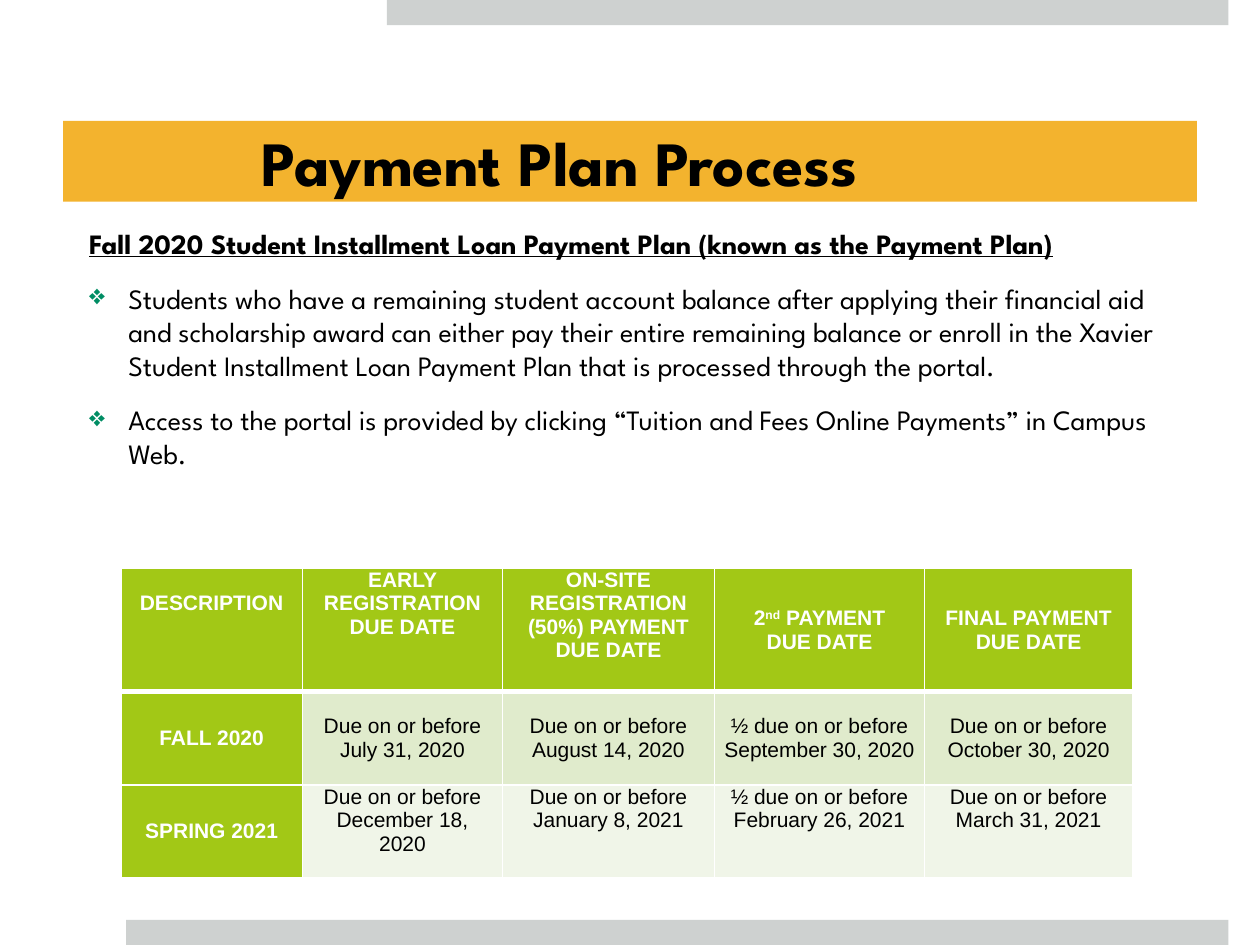
from lxml import etree
from pptx import Presentation
from pptx import util as u
from pptx.dml.color import RGBColor
from pptx.enum import shapes, text
from pptx.oxml import parse_xml
from pptx.oxml.ns import nsdecls, qn

THEME = {
    "bar": "CED1D0", "banner": "F3B32E", "bullet": "008D64",
    "green": "A2C816", "bands": ["E0EBCC", "F0F5E8"],
    "dark": "000000", "light": "FFFFFF",
    "display": "League Spartan", "plain": "Arial",
    "title": 36, "body": 16, "table": 12,
}

deck = Presentation()
deck.slide_width, deck.slide_height = u.Inches(10), u.Inches(7.5)
page = deck.slides.add_slide(deck.slide_layouts[5])
COLUMN, ROW = deck.slide_width / 20, deck.slide_height / 30


def grid(left, top, width, height):
    """Turn columns and rows of the page grid into lengths."""
    return [u.Emu(round(n * unit)) for n, unit in
            zip((left, top, width, height), (COLUMN, ROW, COLUMN, ROW))]


def style(para, face, size, color, bold):
    para.font.name = face
    para.font.size = u.Pt(size)
    para.font.bold = bold
    para.font.color.rgb = RGBColor.from_string(color)


# Grey bars at the top and bottom edges
for place in [(6.14, 0, 13.36, 0.8), (2, 29.2, 17.5, 0.8)]:
    bar = page.shapes.add_shape(shapes.MSO_SHAPE.RECTANGLE, *grid(*place))
    bar.shadow.inherit = False
    bar.fill.solid()
    bar.fill.fore_color.rgb = RGBColor.from_string(THEME["bar"])
    bar.line.fill.background()

# Title banner
title = page.shapes.title
title.left, title.top, title.width, title.height = grid(1, 3.84, 18, 2.56)
title.fill.solid()
title.fill.fore_color.rgb = RGBColor.from_string(THEME["banner"])
frame = title.text_frame
frame.text = "Payment Plan Process"
frame.auto_size = text.MSO_AUTO_SIZE.NONE
frame.vertical_anchor = text.MSO_ANCHOR.MIDDLE
frame.margin_left = round(3.15 * COLUMN)
frame.margin_top = frame.margin_right = frame.margin_bottom = 0
frame.paragraphs[0].alignment = text.PP_ALIGN.LEFT
style(frame.paragraphs[0], THEME["display"], THEME["title"], THEME["dark"], True)

# Heading and bulleted explanation
HEADING = "Fall 2020 Student Installment Loan Payment Plan (known as the Payment Plan)"
POINTS = [
    "Students who have a remaining student account balance after applying their "
    "financial aid and scholarship award can either pay their entire remaining "
    "balance or enroll in the Xavier Student Installment Loan Payment Plan that "
    "is processed through the portal.",
    "Access to the portal is provided by clicking “Tuition and Fees Online "
    "Payments” in Campus Web.",
]
box = page.shapes.add_textbox(*grid(1, 7, 18, 10))
frame = box.text_frame
frame.word_wrap = True
para = frame.paragraphs[0]
para.text = HEADING
para._p.get_or_add_pPr().set("marL", str(u.Inches(0.11)))
style(para, THEME["display"], THEME["body"], THEME["dark"], True)
para.font.underline = True
for point in POINTS:
    para = frame.add_paragraph()
    para.text = point
    para.space_before = u.Pt(12)
    props = para._p.get_or_add_pPr()
    props.set("marL", str(u.Inches(0.42)))
    props.set("indent", str(u.Inches(-0.31)))
    tint = etree.SubElement(props, qn("a:buClr"))
    etree.SubElement(tint, qn("a:srgbClr"), val=THEME["bullet"])
    etree.SubElement(props, qn("a:buChar"), char="❖")
    style(para, THEME["display"], THEME["body"], THEME["dark"], False)

# Due date table: each line of a cell is one paragraph
CELLS = [
    ["DESCRIPTION", "EARLY REGISTRATION DUE DATE",
     "ON-SITE REGISTRATION (50%) PAYMENT DUE DATE",
     "2nd PAYMENT\nDUE DATE", "FINAL PAYMENT\nDUE DATE"],
    ["FALL 2020", "Due on or before July 31, 2020",
     "Due on or before August 14, 2020",
     "½ due on or before September 30, 2020",
     "Due on or before October 30, 2020"],
    ["SPRING 2021", "Due on or before December 18, 2020",
     "Due on or before January 8, 2021",
     "½ due on or before February 26, 2021",
     "Due on or before March 31, 2021"],
]
TOP_ANCHORED = {(0, 0), (0, 1), (0, 2), (2, 1), (2, 2), (2, 3), (2, 4)}
table = page.shapes.add_table(3, 5, *grid(1.92, 18.04, 16.06, 9.84)).table
for column, width in zip(table.columns, [2.88, 3.18, 3.36, 3.34, 3.3]):
    column.width = round(width * COLUMN)
for line, height in zip(table.rows, [3.92, 2.96, 2.96]):
    line.height = round(height * ROW)

for r, values in enumerate(CELLS):
    for c, value in enumerate(values):
        cell = table.cell(r, c)
        label = r == 0 or c == 0
        cell.text = value
        cell.margin_left = cell.margin_right = u.Inches(0.07)
        cell.margin_top = cell.margin_bottom = 0
        cell.vertical_anchor = (text.MSO_ANCHOR.TOP if (r, c) in TOP_ANCHORED
                                else text.MSO_ANCHOR.MIDDLE)
        for para in cell.text_frame.paragraphs:
            para.alignment = text.PP_ALIGN.CENTER
            style(para, THEME["plain"], THEME["table"],
                  THEME["light"] if label else THEME["dark"], label)

        # White rules, heavier under the header
        for side in "LRTB":
            heavy = (r, side) in {(0, "B"), (1, "T")}
            cell._tc.get_or_add_tcPr().append(parse_xml(
                f'<a:ln{side} {nsdecls("a")} w="{u.Pt(3 if heavy else 1)}">'
                f'<a:solidFill><a:srgbClr val="{THEME["light"]}"/></a:solidFill>'
                f'</a:ln{side}>'))
        cell.fill.solid()
        cell.fill.fore_color.rgb = RGBColor.from_string(
            THEME["green"] if label else THEME["bands"][r - 1])

# The first header sits one line lower; the ordinal is raised
table.cell(0, 0).margin_top = u.Inches(0.18)
para = table.cell(0, 3).text_frame.paragraphs[0]
para.runs[0].text = "2"
for part in ["nd", " PAYMENT"]:
    span = para.add_run()
    span.text = part
    if part == "nd":
        span.font._element.set("baseline", "30000")

deck.save("out.pptx")
